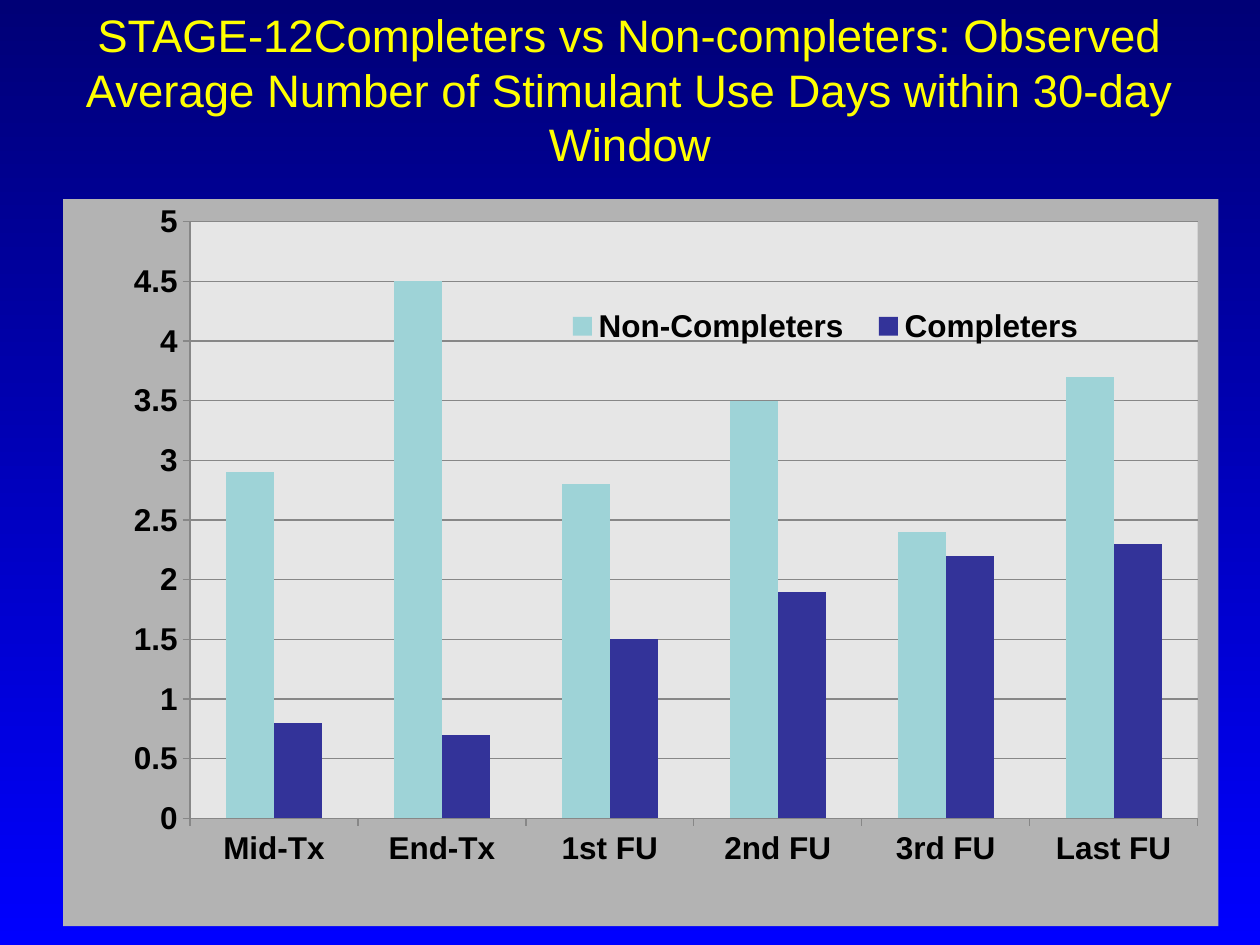
from lxml import etree
from pptx import Presentation
from pptx.chart.data import CategoryChartData
from pptx.dml.color import RGBColor
from pptx.enum.chart import XL_CHART_TYPE, XL_LEGEND_POSITION, XL_TICK_MARK
from pptx.enum.text import MSO_ANCHOR, PP_ALIGN
from pptx.oxml import parse_xml
from pptx.oxml.ns import nsdecls, qn
from pptx.util import Inches, Pt

CLUSTERED = XL_CHART_TYPE.COLUMN_CLUSTERED
LEGEND_TOP = XL_LEGEND_POSITION.TOP
OUTSIDE = XL_TICK_MARK.OUTSIDE
MIDDLE = MSO_ANCHOR.MIDDLE
CENTER = PP_ALIGN.CENTER

FONT = "Arial"
COLORS = {
    "sky_top": "000076",
    "sky_bottom": "0000FF",
    "title": "FFFF00",
    "text": "000000",
    "chart": "B3B3B3",
    "plot": "E6E6E6",
    "lines": "878787",
    "Non-Completers": "9ED3D7",
    "Completers": "333399",
}
CATEGORIES = ["Mid-Tx", "End-Tx", "1st FU", "2nd FU", "3rd FU", "Last FU"]
USE_DAYS = {
    "Non-Completers": [2.9, 4.5, 2.8, 3.5, 2.4, 3.7],
    "Completers": [0.8, 0.7, 1.5, 1.9, 2.2, 2.3],
}


def color(name):
    """Return the named colour."""
    return RGBColor.from_string(COLORS[name])


def solid_area(name):
    """Return chart shape properties with a solid fill and no line."""
    return parse_xml(
        f'<c:spPr {nsdecls("c", "a")}><a:solidFill><a:srgbClr val="{COLORS[name]}"/>'
        "</a:solidFill><a:ln><a:noFill/></a:ln></c:spPr>"
    )


def manual_layout(left, top, width, height, inner=False):
    """Return a chart layout given in fractions of the chart."""
    layout = parse_xml(f'<c:layout {nsdecls("c")}><c:manualLayout/></c:layout>')
    settings = [("layoutTarget", "inner")] if inner else []
    settings += [("xMode", "edge"), ("yMode", "edge")]
    settings += [("x", left), ("y", top), ("w", width), ("h", height)]
    for tag, value in settings:
        etree.SubElement(layout[0], qn(f"c:{tag}")).set("val", str(value))
    return layout


class SlideBuilder:
    """Holds the slide and its style."""

    def __init__(self, slide):
        self.slide = slide

    def background(self):
        """Fill the slide with a vertical gradient."""
        fill = self.slide.background.fill
        fill.gradient()
        fill.gradient_angle = 270
        for stop, name, position in zip(
            fill.gradient_stops, ("sky_top", "sky_bottom"), (0, 1)
        ):
            stop.color.rgb = color(name)
            stop.position = position

    def style_font(self, font, size, name, bold=False):
        """Apply the slide font."""
        font.name = FONT
        font.size = Pt(size)
        font.bold = bold
        font.color.rgb = color(name)

    def title(self, text, left, top, width, height):
        """Add the centred heading."""
        box = self.slide.shapes.add_textbox(
            Inches(left), Inches(top), Inches(width), Inches(height)
        )
        frame = box.text_frame
        frame.word_wrap = True
        frame.vertical_anchor = MIDDLE
        para = frame.paragraphs[0]
        para.text = text
        para.alignment = CENTER
        self.style_font(para.font, 26, "title")

    def column_chart(self, categories, values, left, top, width, height):
        """Add the clustered column chart."""
        data = CategoryChartData()
        data.categories = categories
        for name, numbers in values.items():
            data.add_series(name, numbers)
        chart = self.slide.shapes.add_chart(
            CLUSTERED, Inches(left), Inches(top), Inches(width), Inches(height), data
        ).chart
        chart.has_title = False
        self.style_font(chart.font, 18, "text", bold=True)
        self.style_plot(chart)
        self.style_axes(chart)
        self.style_legend(chart)

    def style_plot(self, chart):
        """Colour the series and both areas, and place the plot."""
        plot = chart.plots[0]
        plot.gap_width = 150
        plot.overlap = 0
        plot.vary_by_categories = False
        for series in plot.series:
            series.format.fill.solid()
            series.format.fill.fore_color.rgb = color(series.name)
            series.invert_if_negative = False
        chart_element = chart.element.find(qn("c:chart"))
        chart_element.addnext(solid_area("chart"))
        area = chart_element.find(qn("c:plotArea"))
        for layout in area.findall(qn("c:layout")):
            area.remove(layout)
        area.insert(0, manual_layout(0.11, 0.031, 0.872, 0.821, inner=True))
        area.append(solid_area("plot"))

    def style_axes(self, chart):
        """Set the scale, ticks, labels and gridlines."""
        value_axis = chart.value_axis
        value_axis.minimum_scale = 0
        value_axis.maximum_scale = 5
        value_axis.major_unit = 0.5
        value_axis.has_major_gridlines = True
        value_axis.tick_labels.number_format = "General"
        value_axis.tick_labels.number_format_is_linked = False
        lines = [value_axis.major_gridlines.format.line]
        for axis in (chart.category_axis, value_axis):
            axis.major_tick_mark = OUTSIDE
            self.style_font(axis.tick_labels.font, 18, "text", bold=True)
            lines.append(axis.format.line)
        for line in lines:
            line.color.rgb = color("lines")
            line.width = Pt(0.75)

    def style_legend(self, chart):
        """Place the legend over the plot."""
        chart.has_legend = True
        legend = chart.legend
        legend.position = LEGEND_TOP
        legend.include_in_layout = False
        self.style_font(legend.font, 18, "text", bold=True)
        element = legend._element
        for layout in element.findall(qn("c:layout")):
            element.remove(layout)
        element.find(qn("c:legendPos")).addnext(manual_layout(0.42, 0.14, 0.48, 0.07))


def main():
    """Build and save the deck."""
    deck = Presentation()
    deck.slide_width = Inches(10)
    deck.slide_height = Inches(7.5)
    page = SlideBuilder(deck.slides.add_slide(deck.slide_layouts[6]))
    page.background()
    page.title(
        "STAGE-12Completers vs Non-completers: Observed Average Number of "
        "Stimulant Use Days within 30-day Window",
        0.5, 0.08, 9, 1.25,
    )
    page.column_chart(CATEGORIES, USE_DAYS, 0.5, 1.58, 9.17, 5.77)
    deck.save("out.pptx")


if __name__ == "__main__":
    main()
